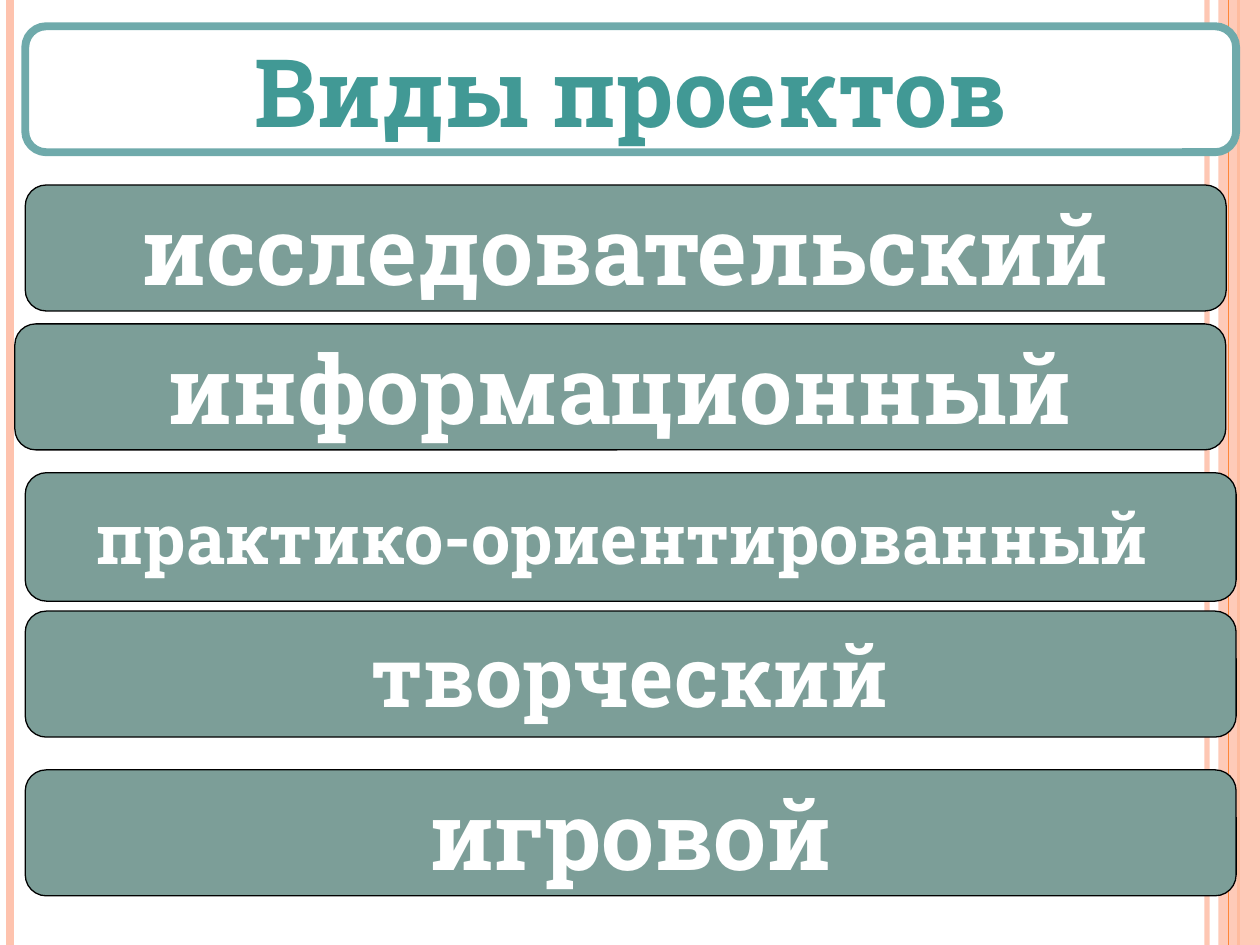
from lxml import etree
from pptx import Presentation
from pptx.dml.color import RGBColor
from pptx.enum.shapes import MSO_CONNECTOR, MSO_SHAPE
from pptx.enum.text import MSO_ANCHOR, PP_ALIGN
from pptx.oxml.ns import qn
from pptx.util import Cm, Pt

STRAIGHT = MSO_CONNECTOR.STRAIGHT
RECTANGLE = MSO_SHAPE.RECTANGLE
ROUNDED = MSO_SHAPE.ROUNDED_RECTANGLE
MIDDLE = MSO_ANCHOR.MIDDLE
CENTER = PP_ALIGN.CENTER

WHITE = RGBColor(0xFF, 0xFF, 0xFF)
BLACK = RGBColor(0, 0, 0)
PEACH = RGBColor(0xFE, 0xC3, 0xAE)
ORANGE = RGBColor(0xFE, 0x86, 0x37)
SAGE = RGBColor(0x7C, 0x9E, 0x98)
TEAL = RGBColor(0x41, 0x99, 0x95)
TEAL_EDGE = RGBColor(0x6F, 0xAA, 0xAB)

FONT = "Roboto Slab"
PAGE_WIDTH, PAGE_HEIGHT = 25.4, 19.05
LEFT, WIDTH, HEIGHT = 0.51, 24.41, 2.54

PROJECT_TYPES = [
    ("исследовательский", 54, (LEFT, 3.73, 24.21, HEIGHT)),
    ("информационный", 54, (0.3, 6.53, WIDTH, HEIGHT)),
    ("практико-ориентированный ", 40, (LEFT, 9.53, WIDTH, 2.59)),
    ("творческий", 48, (LEFT, 12.32, WIDTH, HEIGHT)),
    ("игровой", 54, (LEFT, 15.52, WIDTH, HEIGHT)),
]


def set_opacity(shape, percent):
    """Make every solid colour of the shape partly transparent."""
    for color in shape.element.spPr.iter(qn("a:srgbClr")):
        etree.SubElement(color, qn("a:alpha"), val=str(percent * 1000))


def add_stripe(page, x, box, color, weight, opacity=100):
    """Draw a vertical line at an offset from the left of the box."""
    left, top, _, height = box
    stripe = page.shapes.add_connector(
        STRAIGHT, Cm(left + x), Cm(top), Cm(left + x), Cm(top + height))
    stripe.line.color.rgb = color
    stripe.line.width = Pt(weight)
    if opacity < 100:
        set_opacity(stripe, opacity)
    etree.SubElement(stripe.element.spPr, qn("a:effectLst"))


def add_borders(page, box):
    """Draw the stripes and the band along the sides of the page."""
    left, top, width, height = box
    add_stripe(page, 24.33, box, PEACH, 3, opacity=93)
    add_stripe(page, 0.2, box, PEACH, 4.5)
    add_stripe(page, 24.97, box, ORANGE, 1.5)
    band_width = 0.84
    band = page.shapes.add_shape(
        RECTANGLE, Cm(left + width - band_width), Cm(top), Cm(band_width), Cm(height))
    band.shadow.inherit = False
    band.fill.solid()
    band.fill.fore_color.rgb = PEACH
    band.line.fill.background()
    set_opacity(band, 87)
    add_stripe(page, 24.77, box, ORANGE, 0.75)


def write_text(shape, text, size, color):
    """Write one bold centred line in the shape."""
    frame = shape.text_frame
    frame.word_wrap = False
    frame.vertical_anchor = MIDDLE
    para = frame.paragraphs[0]
    para.alignment = CENTER
    span = para.add_run()
    span.text = text
    span.font.name = FONT
    span.font.size = Pt(size)
    span.font.bold = True
    span.font.color.rgb = color


def add_plate(page, box, text, size, color=WHITE, fill=SAGE, edge=BLACK, weight=0.75):
    """Draw a rounded plate with its caption."""
    plate = page.shapes.add_shape(ROUNDED, *map(Cm, box))
    plate.shadow.inherit = False
    plate.fill.solid()
    plate.fill.fore_color.rgb = fill
    plate.line.color.rgb = edge
    plate.line.width = Pt(weight)
    write_text(plate, text, size=size, color=color)


def main():
    """Build the deck and save it."""
    deck = Presentation()
    deck.slide_width, deck.slide_height = Cm(PAGE_WIDTH), Cm(PAGE_HEIGHT)
    page = deck.slides.add_slide(deck.slide_layouts[6])
    add_borders(page, (0, 0, PAGE_WIDTH, PAGE_HEIGHT))
    add_plate(page, (LEFT, 0.53, WIDTH, HEIGHT), "Виды проектов", 54,
              color=TEAL, fill=WHITE, edge=TEAL_EDGE, weight=4.5)
    for text, size, box in PROJECT_TYPES:
        add_plate(page, box, text, size)
    deck.save("out.pptx")


if __name__ == "__main__":
    main()
